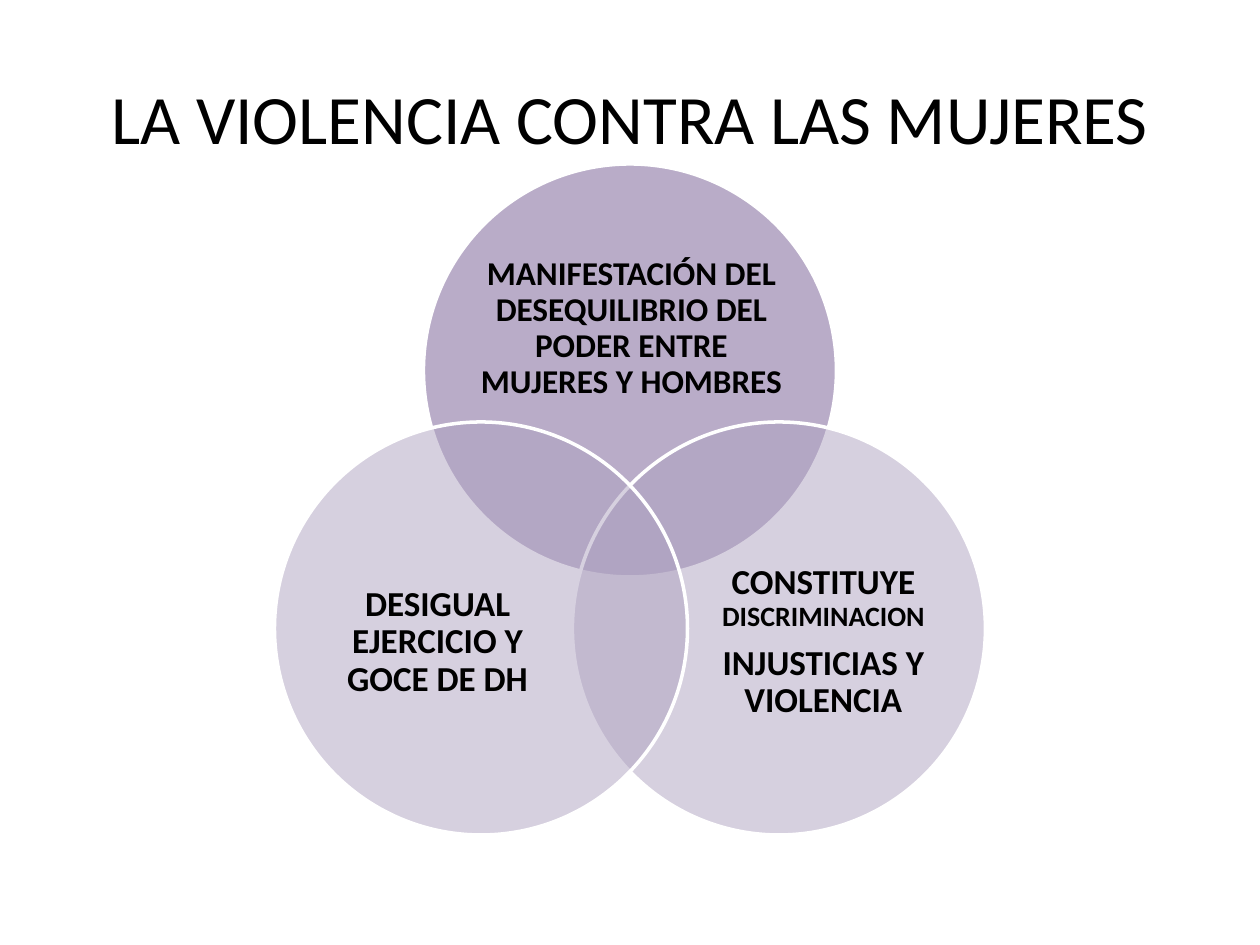
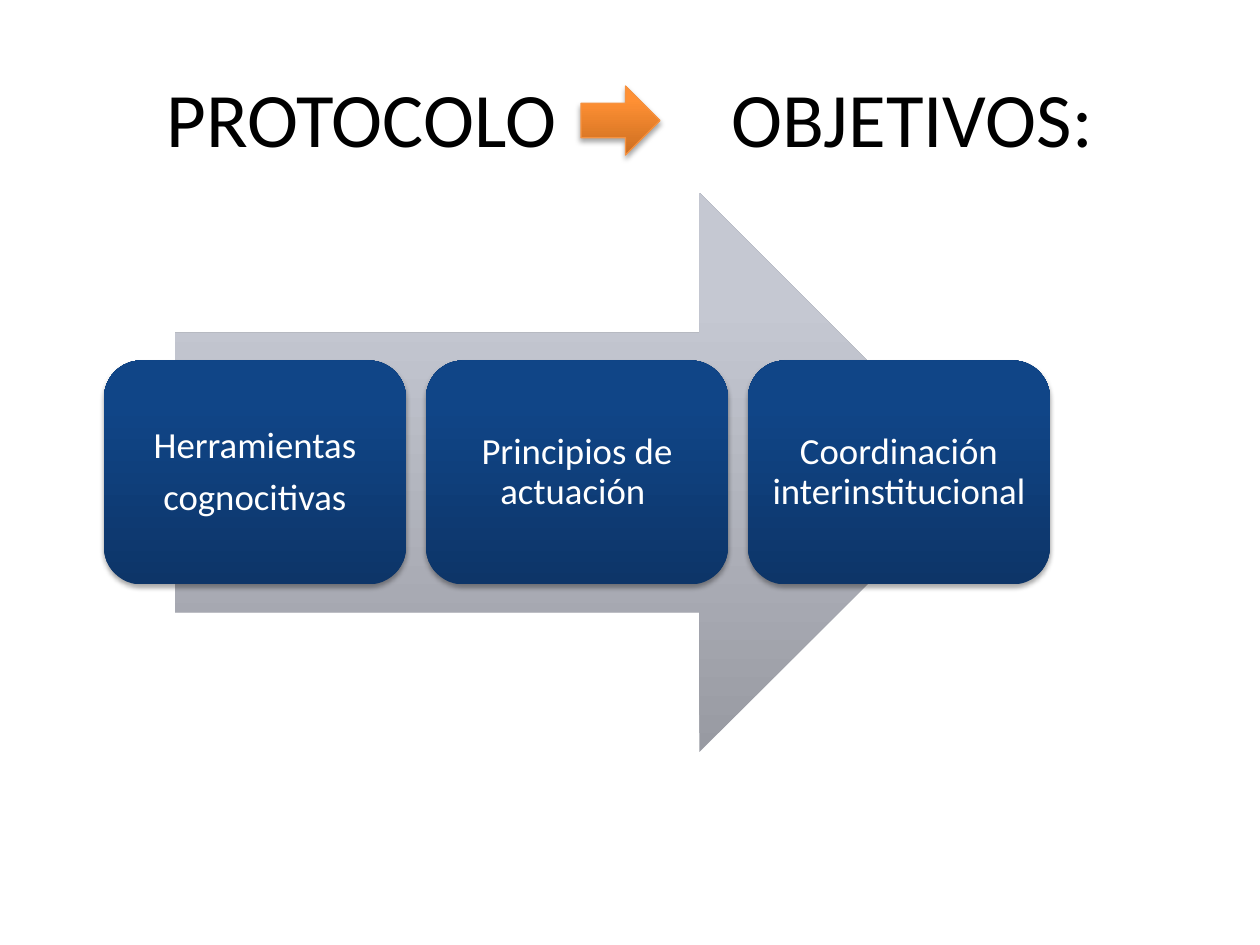
import copy
import math

import lxml.etree
import pptx
import pptx.dml.color
import pptx.enum.dml
import pptx.enum.shapes
import pptx.enum.text
import pptx.oxml
import pptx.oxml.ns
import pptx.util

EMU_PER_PX = 914400 / 126
FONT = "Calibri"
BLACK, WHITE = "000000", "FFFFFF"
DARK_PURPLE, LIGHT_PURPLE = "745B93", "AFA3C1"
ORANGE = ["CC6E20", "FF9034", "FF9136"]
ORANGE_LINE = "F69240"
GRAY = ["989AA2", "C5C8D2", "C5C9D3"]
BLUE = ["0D3568", "104587", "0E458A"]
STOP_POSITIONS = [0, 0.8, 1]
SHAPES = pptx.enum.shapes.MSO_SHAPE
TITLE_BOX = (63, 38, 1134, 157)


def px(length):
    return pptx.util.Emu(round(length * EMU_PER_PX))


def rgb(color):
    return pptx.dml.color.RGBColor.from_string(color)


def add_run(paragraph, text, size, color, bold=False):
    run = paragraph.add_run()
    run.text = text
    font = run.font
    font.name, font.size, font.bold = FONT, pptx.util.Pt(size), bold
    font.color.rgb = rgb(color)
    return run


def set_text(frame, paragraphs, color, bold=False):
    """Fill a centred frame; each paragraph is a list of (text, size) runs."""
    frame.word_wrap = True
    frame.vertical_anchor = pptx.enum.text.MSO_ANCHOR.MIDDLE
    frame.margin_left = frame.margin_right = frame.margin_top = frame.margin_bottom = 0
    for index, runs in enumerate(paragraphs):
        paragraph = frame.add_paragraph() if index else frame.paragraphs[0]
        paragraph.alignment = pptx.enum.text.PP_ALIGN.CENTER
        paragraph.line_spacing = 0.9
        paragraph.space_after = pptx.util.Pt(7)
        for text, size in runs:
            add_run(paragraph, text, size, color, bold)


def add_plain_shape(slide, kind, box):
    shape = slide.shapes.add_shape(kind, *map(px, box))
    shape.shadow.inherit = False
    shape.line.fill.background()
    return shape


def set_line(shape, color, width):
    shape.line.color.rgb = rgb(color)
    shape.line.width = pptx.util.Pt(width)


def set_gradient(shape, colors):
    """Paint a three-stop gradient that runs from bottom to top."""
    shape.fill.gradient()
    shape.fill.gradient_angle = 90
    stop_list = shape._element.spPr.find(".//" + pptx.oxml.ns.qn("a:gsLst"))
    stop_list.append(copy.deepcopy(stop_list[-1]))
    for stop, color, position in zip(shape.fill.gradient_stops, colors, STOP_POSITIONS):
        stop.color.rgb = rgb(color)
        stop.position = position


def add_shadow(shape):
    effects = shape._element.spPr.find(pptx.oxml.ns.qn("a:effectLst"))
    effects.append(pptx.oxml.parse_xml(
        f'<a:outerShdw {pptx.oxml.ns.nsdecls("a")} blurRad="39370" dist="22860" '
        'dir="5400000" rotWithShape="0"><a:srgbClr val="000000">'
        '<a:alpha val="35000"/></a:srgbClr></a:outerShdw>'))


def set_half_transparent_fill(shape, color):
    shape.fill.solid()
    shape.fill.fore_color.rgb = rgb(color)
    color_element = shape._element.spPr.find(".//" + pptx.oxml.ns.qn("a:srgbClr"))
    lxml.etree.SubElement(color_element, pptx.oxml.ns.qn("a:alpha"), val="50000")


def add_title_slide(presentation):
    """Add a title-only slide; return it with its empty title paragraph."""
    slide = presentation.slides.add_slide(presentation.slide_layouts[5])
    title = slide.shapes.title
    title.left, title.top, title.width, title.height = map(px, TITLE_BOX)
    frame = title.text_frame
    frame.auto_size = pptx.enum.text.MSO_AUTO_SIZE.NONE
    frame.vertical_anchor = pptx.enum.text.MSO_ANCHOR.MIDDLE
    paragraph = frame.paragraphs[0]
    paragraph.alignment = pptx.enum.text.PP_ALIGN.CENTER
    return slide, paragraph


def add_venn(slide, box):
    """Place three circles at 120 degrees; label boxes are relative to their circle."""
    left, top, width, height = box
    diameter, distance = 413, 172
    circles = [
        (-90, DARK_PURPLE, (56, 72, 304, 186),
         [[("MANIFESTACIÓN DEL DESEQUILIBRIO DEL PODER ENTRE MUJERES Y HOMBRES", 19)]]),
        (30, LIGHT_PURPLE, (127, 107, 248, 227),
         [[("CONSTITUYE ", 20), ("DISCRIMINACION", 16)], [("INJUSTICIAS Y VIOLENCIA", 20)]]),
        (150, LIGHT_PURPLE, (39, 107, 248, 227),
         [[("DESIGUAL EJERCICIO Y GOCE DE DH", 20)]]),
    ]
    for degrees, color, label_box, paragraphs in circles:
        angle = math.radians(degrees)
        x = left + (width - diameter) / 2 + distance * math.cos(angle)
        y = top + distance * (1 + math.sin(angle))
        circle = add_plain_shape(slide, SHAPES.OVAL, (x, y, diameter, diameter))
        set_half_transparent_fill(circle, color)
        set_line(circle, WHITE, 2)
        dx, dy, label_width, label_height = label_box
        label = slide.shapes.add_textbox(*map(px, (x + dx, y + dy, label_width, label_height)))
        set_text(label.text_frame, paragraphs, BLACK, bold=True)


def add_process(slide, box):
    """Place a row of cards over a wide arrow that fills the height of the box."""
    left, top, width, height = box
    arrow_width, card_height, gap = 804, 224, 20
    arrow_left = left + (width - arrow_width) / 2
    arrow = add_plain_shape(slide, SHAPES.RIGHT_ARROW, (arrow_left, top, arrow_width, height))
    set_gradient(arrow, GRAY)
    cards = [["Herramientas", "cognocitivas"], ["Principios de actuación "],
             ["Coordinación interinstitucional"]]
    card_width = (width - gap * (len(cards) - 1)) / len(cards)
    card_top = top + (height - card_height) / 2
    for index, lines in enumerate(cards):
        card_left = left + index * (card_width + gap)
        card = add_plain_shape(slide, SHAPES.ROUNDED_RECTANGLE,
                               (card_left, card_top, card_width, card_height))
        set_gradient(card, BLUE)
        add_shadow(card)
        set_text(card.text_frame, [[(line, 21)] for line in lines], WHITE)


def build_violence_slide(presentation):
    slide, title = add_title_slide(presentation)
    add_run(title, "LA VIOLENCIA CONTRA LAS MUJERES", 39.6, BLACK)
    add_venn(slide, (273, 164, 714, 671))


def build_objectives_slide(presentation):
    slide, title = add_title_slide(presentation)
    add_run(title, "PROTOCOLO", 44, BLACK)
    gap = add_run(title, " ", 44, BLACK)
    gap._r.get_or_add_rPr().set("spc", "9000")  # widens the gap that holds the arrow
    add_run(title, "OBJETIVOS:", 44, BLACK)
    arrow = add_plain_shape(slide, SHAPES.RIGHT_ARROW, (581, 86, 79, 69))
    set_gradient(arrow, ORANGE)
    set_line(arrow, ORANGE_LINE, 0.75)
    add_shadow(arrow)
    add_process(slide, (104, 193, 946, 559))


def main():
    presentation = pptx.Presentation()
    presentation.slide_width, presentation.slide_height = px(1260), px(945)
    build_violence_slide(presentation)
    build_objectives_slide(presentation)
    presentation.save("out.pptx")


if __name__ == "__main__":
    main()
